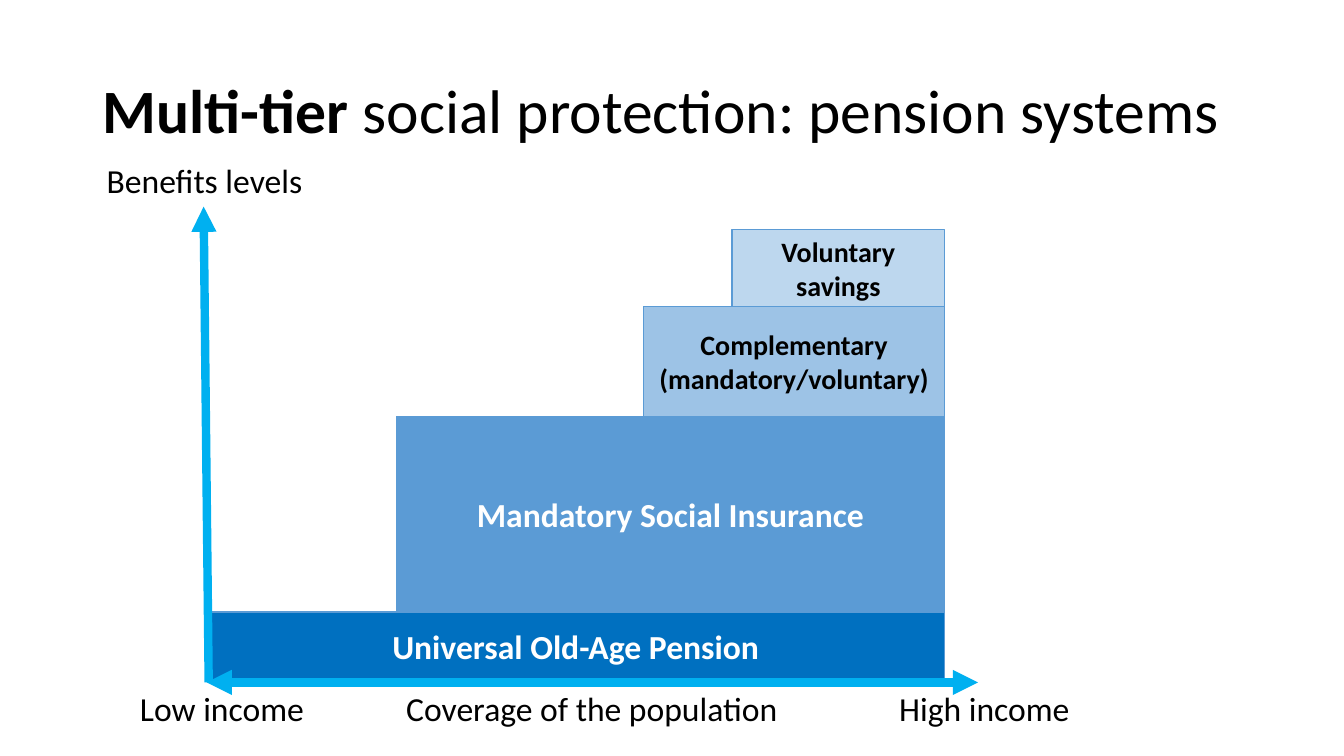
import pptx
import pptx.util
import pptx.dml.color
import pptx.enum.shapes
import pptx.enum.text
import pptx.oxml.ns
from dataclasses import dataclass
from lxml import etree

Inches = pptx.util.Inches
Pt = pptx.util.Pt
Align = pptx.enum.text.PP_ALIGN
Anchor = pptx.enum.text.MSO_ANCHOR
qn = pptx.oxml.ns.qn


@dataclass(frozen=True)
class Theme:
    font: str = "Calibri"
    black: str = "000000"
    white: str = "FFFFFF"
    axis: str = "00B0F0"
    edge: str = "5B9BD5"
    base: str = "0070C0"
    main: str = "5B9BD5"
    mid: str = "9DC3E6"
    pale: str = "BDD7EE"
    title: int = 44
    body: int = 24
    small: int = 20


THEME = Theme()

# Tiers from the ground up: text, left, height, fill, text colour, size
RIGHT, GROUND = 9.37, 6.74
TIERS = [
    ("Universal Old-Age Pension", 2.05, 0.67, THEME.base, THEME.white, THEME.body),
    ("Mandatory Social Insurance", 3.93, 1.94, THEME.main, THEME.white, THEME.body),
    ("Complementary (mandatory/voluntary)", 6.38, 1.09, THEME.mid, THEME.black, THEME.small),
    ("Voluntary savings", 7.26, 0.76, THEME.pale, THEME.black, THEME.small),
]

# Axis labels: text, left, top, width
LABELS = [
    ("Benefits levels", 0.96, 1.54, 2.16),
    ("Low income", 1.29, 6.78, 1.84),
    ("Coverage of the population", 3.93, 6.78, 3.92),
    ("High income", 8.82, 6.78, 1.91),
]


def rgb(code):
    return pptx.dml.color.RGBColor.from_string(code)


def write(shape, *runs, size=THEME.body, color=THEME.black, align=Align.LEFT,
          anchor=Anchor.TOP, wrap=True, space=None):
    """Fill a shape with one paragraph of (text, bold) runs."""
    frame = shape.text_frame
    frame.word_wrap = wrap
    frame.vertical_anchor = anchor
    para = frame.paragraphs[0]
    para.alignment = align
    para.line_spacing = space
    for text, bold in runs:
        run = para.add_run()
        run.text = text
        font = run.font
        font.name, font.size, font.bold = THEME.font, Pt(size), bold
        font.color.rgb = rgb(color)


def add_text(slide, left, top, width, height, *runs, **form):
    box = slide.shapes.add_textbox(
        Inches(left), Inches(top), Inches(width), Inches(height))
    write(box, *runs, **form)


def add_tier(slide, text, left, top, height, fill, color, size):
    box = slide.shapes.add_shape(
        pptx.enum.shapes.MSO_SHAPE.RECTANGLE, Inches(left), Inches(top),
        Inches(RIGHT - left), Inches(height))
    box.shadow.inherit = False
    box.fill.solid()
    box.fill.fore_color.rgb = rgb(fill)
    box.line.color.rgb = rgb(THEME.edge)
    box.line.width = Pt(1)
    write(box, (text, True), size=size, color=color,
          align=Align.CENTER, anchor=Anchor.MIDDLE)


def add_axis(slide, start, end, *heads):
    axis = slide.shapes.add_connector(
        pptx.enum.shapes.MSO_CONNECTOR.STRAIGHT,
        *(Inches(n) for n in (*start, *end)))
    axis.line.color.rgb = rgb(THEME.axis)
    axis.line.width = Pt(6)
    line = axis.line._get_or_add_ln()
    for head in heads:
        etree.SubElement(line, qn(head), type="triangle")
    etree.SubElement(axis._element.spPr, qn("a:effectLst"))


def main():
    deck = pptx.Presentation()
    deck.slide_width, deck.slide_height = Inches(13.33), Inches(7.5)
    slide = deck.slides.add_slide(deck.slide_layouts[6])

    # Title
    add_text(slide, 0.92, 0.4, 11.5, 1.45, ("Multi-tier", True),
             (" social protection: pension systems", False),
             size=THEME.title, anchor=Anchor.MIDDLE, space=0.9)

    # Stacked tiers, flush on the right
    top = GROUND
    for text, left, height, *style in TIERS:
        top -= height
        add_tier(slide, text, left, top, height, *style)

    # Axes
    add_axis(slide, (2.07, 6.77), (2.02, 2.05), "a:tailEnd")
    add_axis(slide, (2.05, 6.77), (9.7, 6.77), "a:headEnd", "a:tailEnd")

    # Axis labels
    for text, left, top, width in LABELS:
        add_text(slide, left, top, width, 0.5, (text, False), wrap=False)

    deck.save("out.pptx")


if __name__ == "__main__":
    main()
